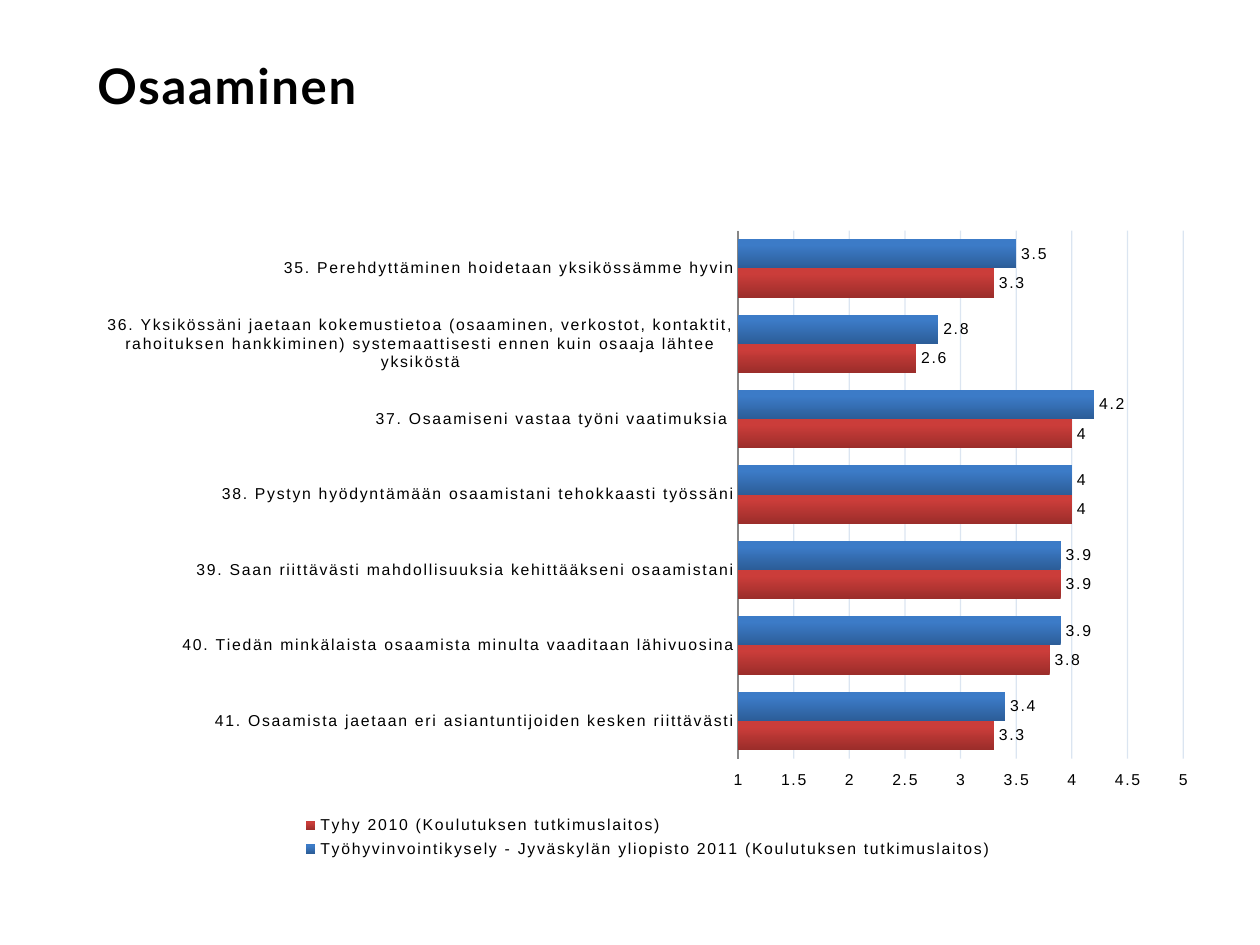
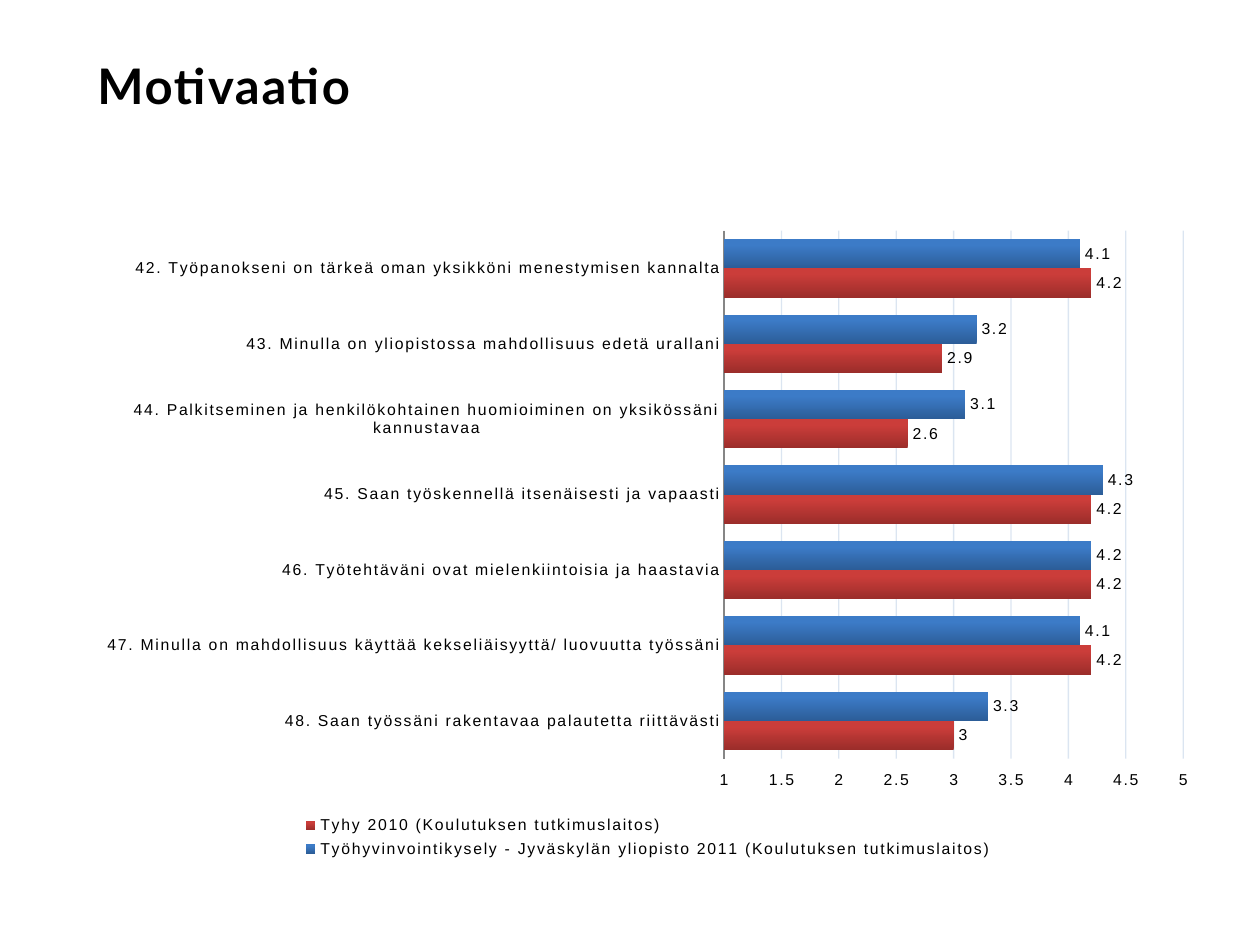
from pptx import Presentation
from pptx.chart.data import CategoryChartData as ChartData
from pptx.dml.color import RGBColor
from pptx.enum.chart import (
    XL_CHART_TYPE as ChartType,
    XL_LABEL_POSITION as LabelPosition,
    XL_LEGEND_POSITION as LegendPosition,
    XL_TICK_LABEL_POSITION as TickLabelPosition,
    XL_TICK_MARK as TickMark,
)
from pptx.enum.text import MSO_ANCHOR as Anchor, MSO_AUTO_SIZE as AutoSize, PP_ALIGN as Align
from pptx.oxml.ns import qn
from pptx.oxml.xmlchemy import OxmlElement
from pptx.util import Pt

# Shared style
TEXT, AXIS, GRID = "000000", "868686", "4F81BD"
LEFT, WIDTH = 48.5, 643
SPACING = "100"  # hundredths of a point between letters

# Series name with the dark and light ends of its bar colour
SERIES = [
    ("Työhyvinvointikysely - Jyväskylän yliopisto 2011 (Koulutuksen tutkimuslaitos)",
     "2C5D98", "3C7BC7"),
    ("Tyhy 2010 (Koulutuksen tutkimuslaitos)", "9B2D2A", "CB3D3A"),
]

# Title, then each statement with its 2011 and 2010 averages
PAGES = [
    ("Osaaminen", [
        ("35. Perehdyttäminen hoidetaan yksikössämme hyvin", 3.5, 3.3),
        ("36. Yksikössäni jaetaan kokemustietoa (osaaminen, verkostot, kontaktit, "
         "rahoituksen hankkiminen) systemaattisesti ennen kuin osaaja lähtee yksiköstä", 2.8, 2.6),
        ("37. Osaamiseni vastaa työni vaatimuksia ", 4.2, 4),
        ("38. Pystyn hyödyntämään osaamistani tehokkaasti työssäni", 4, 4),
        ("39. Saan riittävästi mahdollisuuksia kehittääkseni osaamistani", 3.9, 3.9),
        ("40. Tiedän minkälaista osaamista minulta vaaditaan lähivuosina", 3.9, 3.8),
        ("41. Osaamista jaetaan eri asiantuntijoiden kesken riittävästi", 3.4, 3.3),
    ]),
    ("Motivaatio", [
        ("42. Työpanokseni on tärkeä oman yksikköni menestymisen kannalta", 4.1, 4.2),
        ("43. Minulla on yliopistossa mahdollisuus edetä urallani", 3.2, 2.9),
        ("44. Palkitseminen ja henkilökohtainen huomioiminen on yksikössäni kannustavaa", 3.1, 2.6),
        ("45. Saan työskennellä itsenäisesti ja vapaasti", 4.3, 4.2),
        ("46. Työtehtäväni ovat mielenkiintoisia ja haastavia", 4.2, 4.2),
        ("47. Minulla on mahdollisuus käyttää kekseliäisyyttä/ luovuutta työssäni", 4.1, 4.2),
        ("48. Saan työssäni rakentavaa palautetta riittävästi", 3.3, 3),
    ]),
]


def color(value):
    return RGBColor.from_string(value)


def set_font(font, name="Arial", size=9, bold=False):
    font.name, font.size, font.bold = name, Pt(size), bold
    font.color.rgb = color(TEXT)


def space_letters(element, tag):
    for properties in element.iter(qn(tag)):
        properties.set("spc", SPACING)


class SurveyDeck:
    def __init__(self):
        self.deck = Presentation()
        self.deck.slide_width, self.deck.slide_height = Pt(720), Pt(540)
        self.page = None

    def add_page(self):
        self.page = self.deck.slides.add_slide(self.deck.slide_layouts[5])

    def add_title(self, text):
        box = self.page.shapes.title
        box.left, box.top, box.width, box.height = Pt(LEFT), Pt(28), Pt(WIDTH), Pt(90.75)
        frame = box.text_frame
        frame.word_wrap, frame.auto_size = True, AutoSize.NONE
        frame.vertical_anchor = Anchor.TOP
        para = frame.paragraphs[0]
        para.alignment = Align.LEFT
        span = para.add_run()
        span.text = text
        set_font(span.font, "Lato", 28, bold=True)
        space_letters(box.element, "a:rPr")

    def add_bar_chart(self, rows):
        statements, *columns = zip(*rows)
        data = ChartData()
        data.categories = statements
        for (name, _, _), values in zip(SERIES, columns):
            data.add_series(name, values)
        chart = self.page.shapes.add_chart(
            ChartType.BAR_CLUSTERED, Pt(LEFT), Pt(124.5), Pt(WIDTH), Pt(368.75), data).chart
        set_font(chart.font, "Calibri", 10)
        chart.has_title = False
        chart.has_legend = True
        chart.legend.position = LegendPosition.BOTTOM
        chart.legend.include_in_layout = False
        set_font(chart.legend.font)
        self.format_bars(chart.plots[0])
        self.format_axes(chart)
        space_letters(chart.element, "a:defRPr")

    def format_bars(self, plot):
        plot.gap_width = 58
        plot.vary_by_categories = False
        for series, (_, dark, light) in zip(plot.series, SERIES):
            series.invert_if_negative = False
            fill = series.format.fill
            fill.gradient()
            fill.gradient_angle = 90
            for stop, shade, position in zip(fill.gradient_stops, (dark, light), (0, 0.8)):
                stop.color.rgb, stop.position = color(shade), position
            labels = series.data_labels
            labels.show_value = True
            labels.position = LabelPosition.OUTSIDE_END
            set_font(labels.font)

    def format_axes(self, chart):
        statements, scale = chart.category_axis, chart.value_axis
        for axis in (statements, scale):
            axis.major_tick_mark = axis.minor_tick_mark = TickMark.NONE
            set_font(axis.tick_labels.font)
        # Statements run downwards, with the scale kept at the bottom
        statements.reverse_order = True
        scale.tick_label_position = TickLabelPosition.HIGH
        statements.has_major_gridlines = False
        statements.format.line.color.rgb = color(AXIS)
        statements.format.line.width = Pt(0.75)
        scale.minimum_scale, scale.maximum_scale, scale.major_unit = 1, 5, 0.5
        scale.format.line.fill.background()
        # Faint gridlines
        scale.has_major_gridlines = True
        line = scale.major_gridlines.format.line
        line.color.rgb, line.width = color(GRID), Pt(0.75)
        alpha = OxmlElement("a:alpha")
        alpha.set("val", "20000")
        chart.element.xpath(".//c:majorGridlines//a:srgbClr")[0].append(alpha)


def main():
    survey = SurveyDeck()
    for title, rows in PAGES:
        survey.add_page()
        survey.add_title(title)
        survey.add_bar_chart(rows)
    survey.deck.save("out.pptx")


if __name__ == "__main__":
    main()
